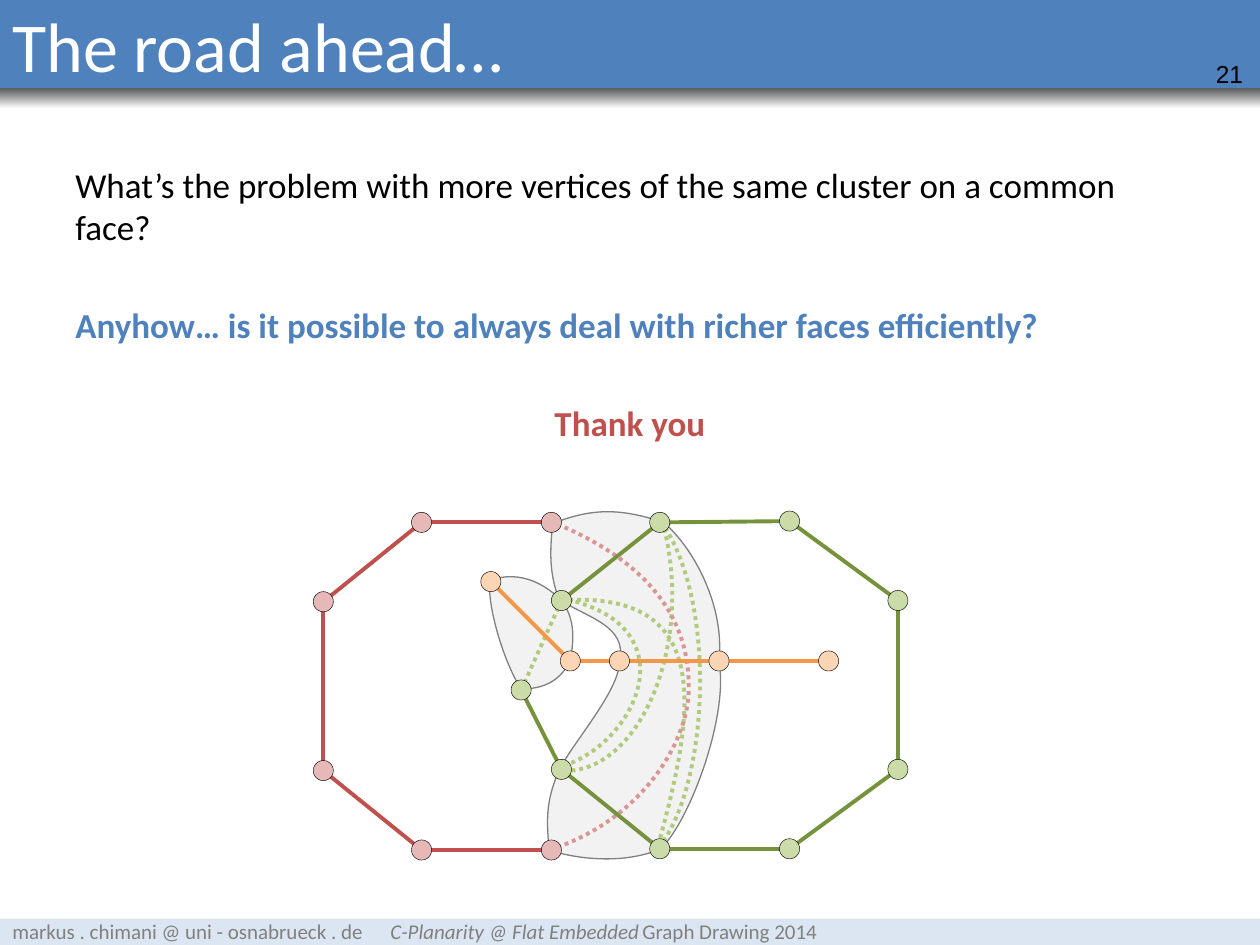
from itertools import pairwise

from lxml.etree import SubElement
from pptx import Presentation
from pptx.dml.color import RGBColor
from pptx.enum.dml import MSO_LINE
from pptx.enum.shapes import MSO_CONNECTOR, MSO_SHAPE
from pptx.enum.text import MSO_ANCHOR, PP_ALIGN
from pptx.oxml.ns import qn
from pptx.util import Cm, Pt

BLACK = RGBColor(0x00, 0x00, 0x00)
WHITE = RGBColor(0xFF, 0xFF, 0xFF)
DARK_GRAY = RGBColor(0x59, 0x59, 0x59)
GRAY = RGBColor(0x80, 0x80, 0x80)
PALE_GRAY = RGBColor(0xF2, 0xF2, 0xF2)
BLUE = RGBColor(0x4F, 0x81, 0xBD)
PALE_BLUE = RGBColor(0xDC, 0xE6, 0xF2)
RED = RGBColor(0xC0, 0x50, 0x4D)
MID_RED = RGBColor(0xD9, 0x96, 0x94)
PALE_RED = RGBColor(0xE6, 0xB9, 0xB8)
GREEN = RGBColor(0x76, 0x92, 0x3C)
MID_GREEN = RGBColor(0xB1, 0xCA, 0x7E)
PALE_GREEN = RGBColor(0xCB, 0xDC, 0xA9)
ORANGE = RGBColor(0xF7, 0x96, 0x46)
PALE_ORANGE = RGBColor(0xFC, 0xD5, 0xB5)

GRID_COLUMNS = 47
NODE_SIZE = 1.6
BOUND_STEPS = 20

RED_PATH = [(18.8, 1.5), (8.5, 1.5), (0.7, 7.8), (0.7, 21.2), (8.5, 27.5), (18.8, 27.5)]
GREEN_PATH = [(16.4, 14.8), (19.6, 21.1), (27.4, 27.4), (37.7, 27.4), (46.3, 21.1),
              (46.3, 7.7), (37.7, 1.4), (27.4, 1.5), (19.6, 7.7)]
ORANGE_PATH = [(14, 6.2), (20.3, 12.5), (24.2, 12.5), (32.1, 12.5), (40.8, 12.5)]

REGIONS = [
    [(19.6, 7.7), (18.5, 6.6), (16.5, 5.2), (13.9, 6.1),
     (13.7, 8.4), (15.2, 13), (16.4, 14.7),
     (18.8, 14.8), (19.9, 13.4), (20.3, 12.4),
     (20.6, 10.8), (20.7, 9.2), (19.6, 7.7)],
    [(27.7, 1.5), (24.4, 0.4), (22.1, 0.3), (18.9, 1.6),
     (18.7, 3.8), (18.6, 5.4), (19.4, 7.6),
     (21.7, 9.1), (24.9, 9.7), (24.2, 12.6),
     (24.2, 14.8), (20.6, 18.9), (19.5, 21),
     (18.2, 23.8), (18.5, 25.4), (18.6, 27.5),
     (21.1, 28.3), (24.7, 28.6), (27.5, 27.4),
     (29.9, 25), (32.9, 16.7), (32.1, 12.5),
     (32.6, 8.2), (30.1, 3.5), (27.7, 1.5)],
]
GREEN_CURVES = [
    [(19.6, 7.7), (32.2, 6.8), (30, 17.3), (27.2, 27.4)],
    [(27.6, 1.4), (30.3, 11.2), (25.7, 21.6), (19.6, 21.2)],
    [(19.5, 7.5), (30.1, 9.6), (25.5, 19.2), (19.5, 20.9)],
    [(27.5, 1.4), (32.1, 8), (31.2, 22.6), (27.3, 27.3)],
]
RED_CURVE = [(18.7, 1.4), (27.7, 5), (29.7, 10.2), (29.7, 14.5),
             (29.8, 18.9), (25.9, 25.1), (18.9, 27.4)]


def add_run(p, text, size, color, font="Calibri", bold=False, italic=False):
    r = p.add_run()
    r.text = text
    r.font.name, r.font.size = font, Pt(size)
    r.font.bold, r.font.italic = bold, italic
    r.font.color.rgb = color


def add_panel(s, box, color, anchor=MSO_ANCHOR.BOTTOM, align=PP_ALIGN.LEFT):
    sp = s.shapes.add_shape(MSO_SHAPE.RECTANGLE, *map(Cm, box))
    sp.shadow.inherit = False
    sp.fill.solid()
    sp.fill.fore_color.rgb = color
    sp.line.fill.background()
    sp.text_frame.vertical_anchor = anchor
    sp.text_frame.paragraphs[0].alignment = align
    return sp


def add_header(s, left, top, width, height):
    number_width, edge = 0.79, 0.2
    title_width = width - number_width - edge
    shade = add_panel(s, (left, top + height, width, 0.41), DARK_GRAY)
    shade.fill.gradient()
    shade.fill.gradient_angle = 270
    for stop, color, position in zip(shade.fill.gradient_stops, (DARK_GRAY, WHITE), (0, 1)):
        stop.color.rgb, stop.position = color, position

    number = add_panel(s, (left + title_width, top, number_width, height), BLUE,
                       align=PP_ALIGN.RIGHT)
    tf = number.text_frame
    tf.margin_left = tf.margin_top = tf.margin_right = tf.margin_bottom = 0
    add_run(tf.paragraphs[0], "21 ", 14, BLACK, font="Arial")

    add_panel(s, (left + title_width + number_width, top, edge, height), BLUE)
    title = add_panel(s, (left, top, title_width, height), BLUE, MSO_ANCHOR.MIDDLE)
    add_run(title.text_frame.paragraphs[0], "The road ahead…", 40, WHITE)


def add_footer(s, *box):
    p = add_panel(s, box, PALE_BLUE).text_frame.paragraphs[0]
    add_run(p, "markus . chimani @ uni - osnabrueck . de\t", 12, GRAY)
    add_run(p, "C-Planarity @ Flat Embedded", 12, GRAY, italic=True)
    add_run(p, "\tGraph Drawing 2014", 12, GRAY)


def add_body(s, *box):
    tf = s.shapes.add_textbox(*map(Cm, box)).text_frame
    tf.word_wrap = True
    p = tf.paragraphs[0]
    add_run(p, "What’s the problem with more vertices of the same cluster on a common face?",
            20, BLACK)
    for text, color, align in [
        ("Anyhow… is it possible to always deal with richer faces efficiently?",
         BLUE, PP_ALIGN.LEFT),
        ("Thank you", RED, PP_ALIGN.CENTER),
    ]:
        p = tf.add_paragraph()
        p.alignment, p.space_before = align, Pt(32)
        add_run(p, text, 20, color, bold=True)


def curve_bounds(points):
    samples = []
    for i in range(0, len(points) - 1, 3):
        for step in range(BOUND_STEPS + 1):
            t = step / BOUND_STEPS
            weights = ((1 - t) ** 3, 3 * t * (1 - t) ** 2, 3 * t * t * (1 - t), t ** 3)
            samples.append([sum(w * c for w, c in zip(weights, axis))
                            for axis in zip(*points[i:i + 4])])
    xs, ys = zip(*samples)
    return int(min(xs)), int(min(ys)), int(max(xs)), int(max(ys))


def build_curve(s, points, close):
    x0, y0, x1, y1 = curve_bounds(points)
    builder = s.shapes.build_freeform(x0, y0)
    builder.add_line_segments([(x1, y1)], close=False)
    sp = builder.convert_to_shape()
    path = sp._element.spPr.find(".//" + qn("a:path"))
    for command in list(path):
        path.remove(command)

    def add_command(tag, command_points):
        command = SubElement(path, qn(tag))
        for x, y in command_points:
            SubElement(command, qn("a:pt"), x=str(x - x0), y=str(y - y0))

    add_command("a:moveTo", points[:1])
    for i in range(1, len(points), 3):
        add_command("a:cubicBezTo", points[i:i + 3])
    if close:
        add_command("a:close", [])
    return sp


def add_graph(s, left, top, width):
    unit = width / GRID_COLUMNS

    def place(point):
        return Cm(left + point[0] * unit), Cm(top + point[1] * unit)

    def style_line(line, color, weight, dotted=False):
        line.color.rgb, line.width = color, Pt(weight)
        if dotted:
            line.dash_style = MSO_LINE.ROUND_DOT

    def add_curve(points, color, weight, fill=None):
        sp = build_curve(s, [place(point) for point in points], fill is not None)
        sp.shadow.inherit = False
        if fill is None:
            sp.fill.background()
        else:
            sp.fill.solid()
            sp.fill.fore_color.rgb = fill
        style_line(sp.line, color, weight, dotted=fill is None)

    def add_edge(start, end, color, dotted=False):
        edge = s.shapes.add_connector(MSO_CONNECTOR.STRAIGHT, *place(start), *place(end))
        style_line(edge.line, color, 2.25, dotted)
        SubElement(edge._element.spPr, qn("a:effectLst"))

    def add_node(center, color):
        corner = [c - NODE_SIZE / 2 for c in center]
        size = Cm(NODE_SIZE * unit)
        sp = s.shapes.add_shape(MSO_SHAPE.OVAL, *place(corner), size, size)
        sp.shadow.inherit = False
        sp.fill.solid()
        sp.fill.fore_color.rgb = color
        style_line(sp.line, BLACK, 0.25)

    for region in REGIONS:
        add_curve(region, GRAY, 0.75, fill=PALE_GRAY)
    for curve in GREEN_CURVES:
        add_curve(curve, MID_GREEN, 2.25)
    add_curve(RED_CURVE, MID_RED, 2.25)
    add_edge(GREEN_PATH[-1], GREEN_PATH[0], MID_GREEN, dotted=True)
    clusters = [(RED_PATH, RED, PALE_RED), (GREEN_PATH, GREEN, PALE_GREEN),
                (ORANGE_PATH, ORANGE, PALE_ORANGE)]
    for nodes, color, _ in clusters:
        for start, end in pairwise(nodes):
            add_edge(start, end, color)
    for nodes, _, fill in clusters:
        for node in nodes:
            add_node(node, fill)


def main():
    prs = Presentation()
    prs.slide_width, prs.slide_height = Cm(25.4), Cm(19.05)
    s = prs.slides.add_slide(prs.slide_layouts[6])
    add_header(s, 0, 0, 25.4, 1.78)
    add_footer(s, 0, 18.52, 25.4, 0.63)
    add_graph(s, 6.34, 10.15, 11.94)
    add_body(s, 1.27, 3.18, 22.86, 13.84)
    prs.save("out.pptx")


if __name__ == "__main__":
    main()
